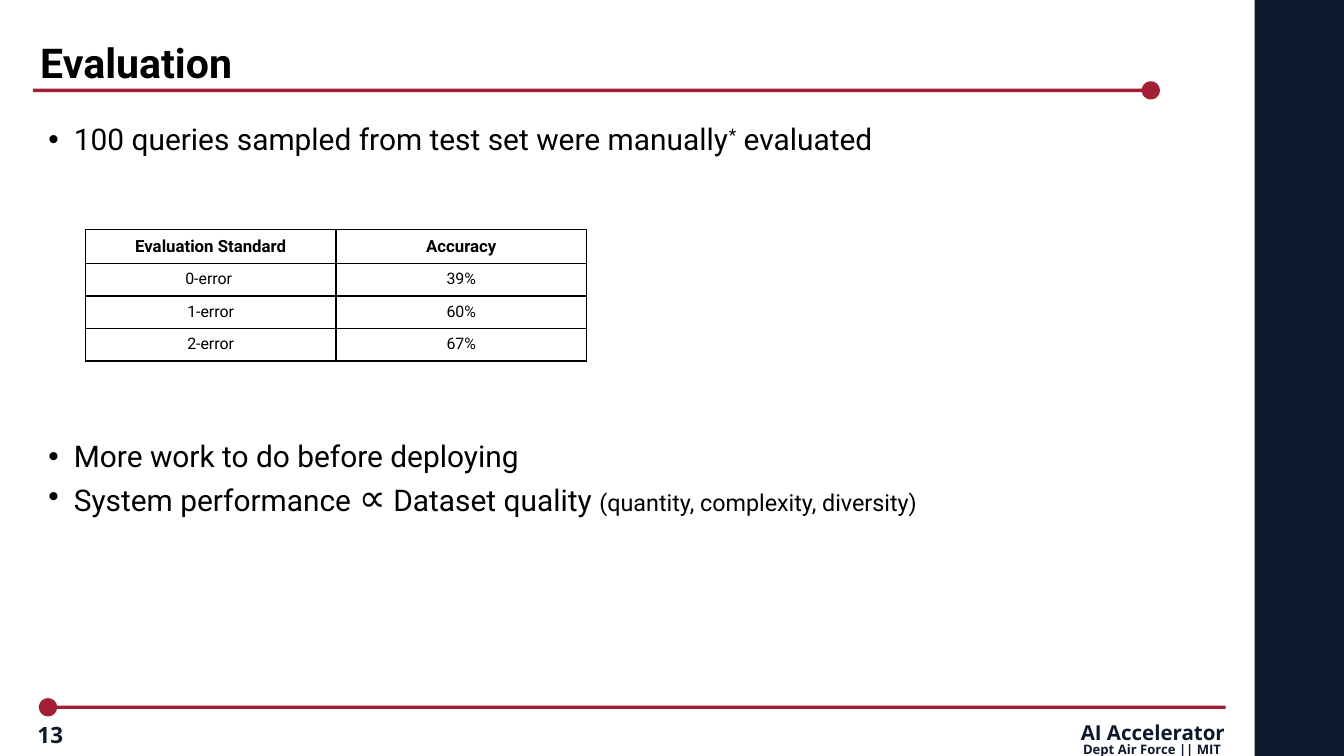
from math import asin, cos, pi, sin

from lxml.etree import SubElement
from pptx import Presentation
from pptx.dml.color import RGBColor
from pptx.enum.shapes import MSO_SHAPE
from pptx.enum.text import MSO_ANCHOR, PP_ALIGN
from pptx.oxml.ns import qn
from pptx.util import Inches, Pt

NAVY, RED, BLACK, WHITE = "0C182B", "A21F34", "000000", "FFFFFF"


def paint(color, value):
    """Set a colour from a hex string."""
    color.rgb = RGBColor.from_string(value)


def style(font, size, value=BLACK, name="Roboto", bold=False):
    """Set face, size, colour and weight of a font."""
    font.name, font.size, font.bold = name, Pt(size), bold
    paint(font.color, value)


def flatten(shape, value):
    """Give a shape a plain fill without line or shadow."""
    shape.shadow.inherit = False
    shape.fill.solid()
    paint(shape.fill.fore_color, value)
    shape.line.fill.background()


def add_band(slide, box):
    """Place the navy side band."""
    shape = slide.shapes.add_shape(MSO_SHAPE.RECTANGLE, *map(Inches, box))
    flatten(shape, NAVY)


def add_frame(slide, box, inset=(0.1, 0.05), anchor=MSO_ANCHOR.TOP):
    """Add a wrapping text box and return its frame."""
    frame = slide.shapes.add_textbox(*map(Inches, box)).text_frame
    frame.word_wrap = True
    frame.vertical_anchor = anchor
    frame.margin_left = frame.margin_right = Inches(inset[0])
    frame.margin_top = frame.margin_bottom = Inches(inset[1])
    return frame


def add_rule(slide, box, right, half=0.025, steps=48):
    """Draw a red bar that ends in a dot on the right or left."""
    left, top, width, height = box
    radius, mid = height / 2, top + height / 2
    if right:
        tail, hub, way = left, left + width - radius, -1
    else:
        tail, hub, way = left + width, left + radius, 1
    gap = asin(half / radius)
    turns = [gap + (2 * pi - 2 * gap) * i / steps for i in range(steps + 1)]
    spots = [(hub + way * radius * cos(t), mid + radius * sin(t))
             for t in turns]
    spots.append((tail, mid - half))
    pen = slide.shapes.build_freeform(Inches(tail), Inches(mid + half))
    pen.add_line_segments([(Inches(x), Inches(y)) for x, y in spots])
    flatten(pen.convert_to_shape(), RED)


def add_title(slide, box, text):
    """Place the title and the rule below it."""
    left, top, width, height = box
    frame = add_frame(slide, box, anchor=MSO_ANCHOR.MIDDLE)
    para = frame.paragraphs[0]
    para.text = text
    style(para.font, 44, bold=True)
    add_rule(slide, (left - 0.01, top + 0.91, 16.77, 0.27), True)


def add_bullets(slide, box, items):
    """Place bulleted lines given as lists of (text, size, raise)."""
    frame = add_frame(slide, box)
    for index, parts in enumerate(items):
        para = frame.add_paragraph() if index else frame.paragraphs[0]
        props = para._p.get_or_add_pPr()
        props.set("marL", str(Inches(0.5)))
        props.set("indent", str(Inches(-0.38)))
        SubElement(props, qn("a:buFont"), typeface="Arial")
        SubElement(props, qn("a:buChar"), char="•")
        style(para.font, 32)
        for text, size, lift in parts:
            run = para.add_run()
            run.text = text
            style(run.font, size)
            if lift:
                run._r.get_or_add_rPr().set("baseline", str(lift * 1000))


def add_border(cell, value=BLACK, width=1.5):
    """Draw all four borders of a cell."""
    props = cell._tc.get_or_add_tcPr()
    for index, side in enumerate(("lnL", "lnR", "lnT", "lnB")):
        line = props.makeelement(qn(f"a:{side}"), {"w": str(Pt(width))})
        fill = SubElement(line, qn("a:solidFill"))
        SubElement(fill, qn("a:srgbClr"), val=value)
        props.insert(index, line)


def add_scores(slide, box, rows, heights):
    """Place the accuracy table."""
    table = slide.shapes.add_table(
        len(rows), len(rows[0]), *map(Inches, box)).table
    table.horz_banding = False
    for r, row in enumerate(rows):
        table.rows[r].height = Inches(heights[r])
        for c, text in enumerate(row):
            cell = table.cell(r, c)
            cell.fill.solid()
            paint(cell.fill.fore_color, WHITE)
            cell.margin_left = cell.margin_right = Inches(0.1)
            cell.margin_top = cell.margin_bottom = Inches(0.1)
            para = cell.text_frame.paragraphs[0]
            para.text = text
            para.alignment = PP_ALIGN.CENTER
            style(para.font, 17 if r else 18, bold=r == 0)
            add_border(cell)


def add_footer(slide, box, number, lines):
    """Place the bottom rule, page number and centred credit lines."""
    left, top, width, height = box
    add_rule(slide, (left, top, width, 0.27), False)
    frame = add_frame(slide, (left - 0.12, top + 0.34, 2.33, 0.4),
                      anchor=MSO_ANCHOR.MIDDLE)
    para = frame.paragraphs[0]
    para.text = number
    style(para.font, 24, NAVY, "Open Sans", True)
    for text, size, shift, drop, wide, tall in lines:
        spot = (left + shift, top + drop, wide, tall)
        para = add_frame(slide, spot, (0, 0)).paragraphs[0]
        para.text = text
        para.alignment = PP_ALIGN.CENTER
        para.line_spacing = 1.4
        style(para.font, size, NAVY, "Open Sans", True)


def main():
    """Build and save the slide."""
    deck = Presentation()
    deck.slide_width, deck.slide_height = Inches(20), Inches(11.25)
    slide = deck.slides.add_slide(deck.slide_layouts[6])
    add_band(slide, (18.67, 0, 1.33, 11.25))
    add_title(slide, (0.5, 0.3, 14.33, 1.25), "Evaluation")
    add_bullets(slide, (0.5, 1.75, 16.19, 0.7), [
        [("100 queries sampled from test set were manually", 32, 0),
         ("*", 32, 30), (" evaluated", 32, 0)]])
    add_scores(slide, (1.27, 3.42, 7.46, 1.95), [
        ("Evaluation Standard", "Accuracy"),
        ("0-error ", "39%"), ("1-error", "60%"), ("2-error", "67%")],
        (0.42, 0.42, 0.42, 0.39))
    add_bullets(slide, (0.5, 6.47, 16.19, 1.4), [
        [("More work to do before deploying", 32, 0)],
        [("System performance ", 32, 0), ("∝", 40.5, 0),
         (" Dataset quality ", 32, 0),
         ("(quantity, complexity, diversity)", 25, 0)]])
    add_footer(slide, (0.58, 10.39, 17.66, 0.86), "13", [
        ("AI Accelerator", 22, 15.5, 0.18, 2.15, 0.89),
        ("Dept Air Force || MIT", 14, 15.44, 0.55, 2.25, 0.24)])
    deck.save("out.pptx")


if __name__ == "__main__":
    main()
